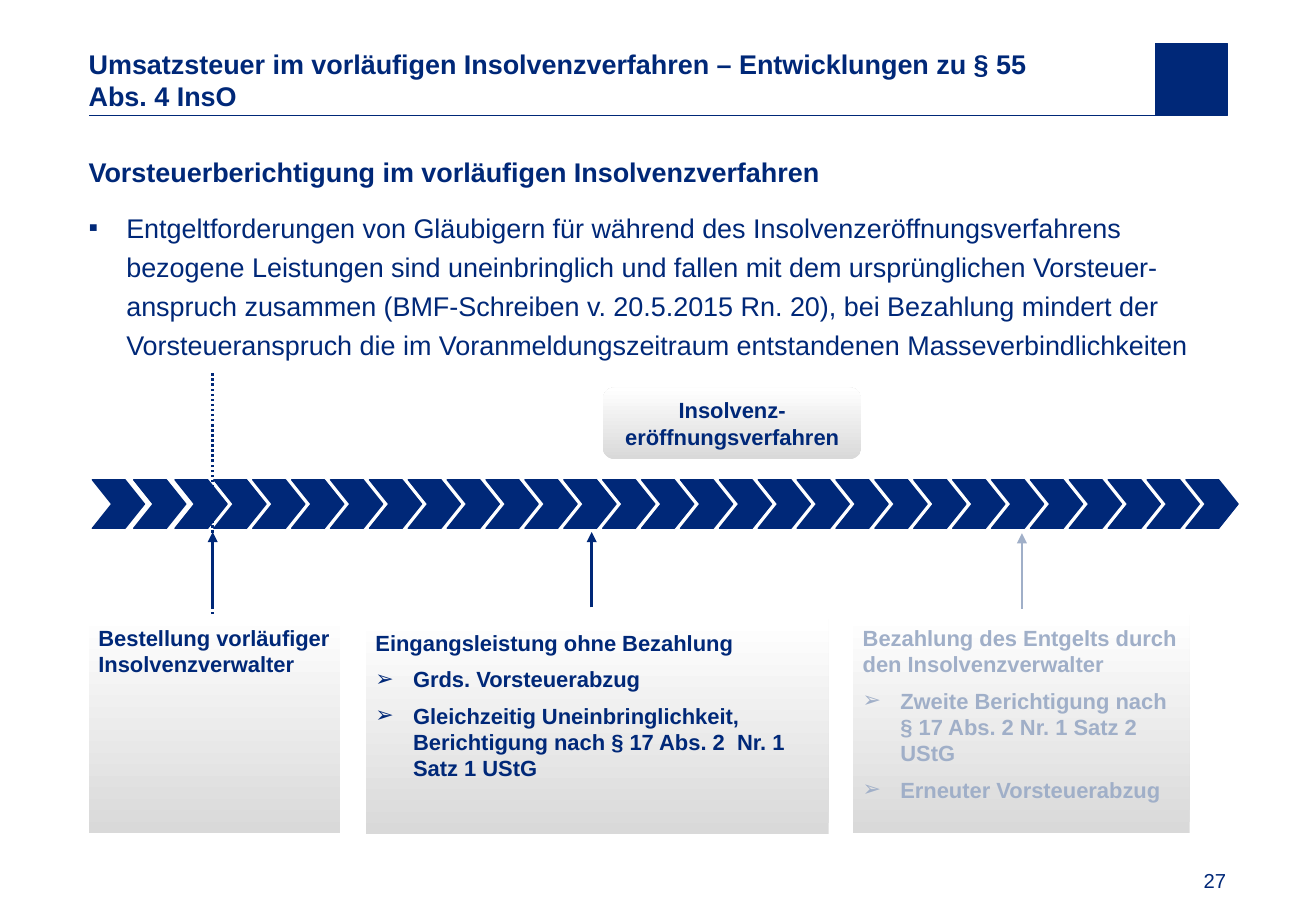
from lxml import etree
from pptx import Presentation
from pptx.dml.color import RGBColor
from pptx.enum.dml import MSO_LINE
from pptx.enum.shapes import MSO_CONNECTOR, MSO_SHAPE
from pptx.enum.text import MSO_ANCHOR, PP_ALIGN
from pptx.oxml.ns import qn
from pptx.util import Pt

PX = 9144  # 100 px to the inch
NAVY, PALE, GREY, WHITE = "002878", "A0AFC8", "D9D9D9", "FFFFFF"
RECT, ROUND, CHEVRON = MSO_SHAPE.RECTANGLE, MSO_SHAPE.ROUNDED_RECTANGLE, MSO_SHAPE.CHEVRON
TOP, MIDDLE, BOTTOM = MSO_ANCHOR.TOP, MSO_ANCHOR.MIDDLE, MSO_ANCHOR.BOTTOM
LEFT, CENTER, RIGHT = PP_ALIGN.LEFT, PP_ALIGN.CENTER, PP_ALIGN.RIGHT
STRAIGHT, DOTTED = MSO_CONNECTOR.STRAIGHT, MSO_LINE.ROUND_DOT
rgb = RGBColor.from_string

prs = Presentation()
prs.slide_width, prs.slide_height = 1083 * PX, 750 * PX
s = prs.slides.add_slide(prs.slide_layouts[6])


def write(sp, paras, size, color, anchor=TOP, align=LEFT, inset=(0, 0), before=0, spacing=None):
    """Fill a shape with paragraphs given as (text, bold, bullet)."""
    tf = sp.text_frame
    tf.word_wrap = True
    tf.vertical_anchor = anchor
    tf.margin_left = tf.margin_right = inset[0] * PX
    tf.margin_top = tf.margin_bottom = inset[1] * PX
    for i, (text, bold, bullet) in enumerate(paras):
        p = tf.add_paragraph() if i else tf.paragraphs[0]
        p.alignment = align
        p.space_before = Pt(before if i else 0)
        if spacing:
            p.line_spacing = spacing
        if bullet:
            pPr = p._p.get_or_add_pPr()
            pPr.set("marL", str(31 * PX))
            pPr.set("indent", str(-31 * PX))
            etree.SubElement(pPr, qn("a:buFont")).set("typeface", "Arial")
            etree.SubElement(pPr, qn("a:buChar")).set("char", bullet)
        for j, part in enumerate(text.split("\n")):
            if j:
                p.add_line_break()
            r = p.add_run()
            r.text = part
            r.font.name, r.font.size, r.font.bold = "Arial", Pt(size), bold
            r.font.color.rgb = rgb(color)


def connect(x1, y1, x2, y2, color, width, arrow=False):
    ln = s.shapes.add_connector(STRAIGHT, x1 * PX, y1 * PX, x2 * PX, y2 * PX)
    ln.line.color.rgb = rgb(color)
    ln.line.width = Pt(width)
    etree.SubElement(ln._element.spPr, qn("a:effectLst"))
    if arrow:
        etree.SubElement(ln.line._get_or_add_ln(), qn("a:tailEnd")).set("type", "triangle")
    return ln


# Header rule and dotted time marker
connect(1010, 95, 73, 95, NAVY, 0.5)
connect(175, 564, 175, 306, NAVY, 1.5).line.dash_style = DOTTED

# Title, body and page number
title = "Umsatzsteuer im vorläufigen Insolvenzverfahren – Entwicklungen zu § 55\nAbs. 4 InsO"
body = [
    ("Vorsteuerberichtigung im vorläufigen Insolvenzverfahren", True, None),
    ("Entgeltforderungen von Gläubigern für während des Insolvenzeröffnungsverfahrens "
     "bezogene Leistungen sind uneinbringlich und fallen mit dem ursprünglichen "
     "Vorsteuer-anspruch zusammen (BMF-Schreiben v. 20.5.2015 Rn. 20), bei Bezahlung "
     "mindert der Vorsteueranspruch die im Voranmeldungszeitraum entstandenen "
     "Masseverbindlichkeiten", False, "▪"),
]
texts = [
    ((73, 36, 840, 59), [(title, True, None)], 16, MIDDLE, LEFT, 0, None),
    ((73, 123, 937, 551), body, 16, TOP, LEFT, 10, 1.2),
    ((957, 710, 52, 25), [("27", False, None)], 12, BOTTOM, RIGHT, 0, None),
]
for box, paras, size, anchor, align, before, spacing in texts:
    sp = s.shapes.add_textbox(*(v * PX for v in box))
    write(sp, paras, size, NAVY, anchor, align, before=before, spacing=spacing)

# Gradient boxes
boxes = [
    (RECT, (702, 506, 277, 180), PALE, [
        ("Bezahlung des Entgelts durch den Insolvenzverwalter", True, None),
        ("Zweite Berichtigung nach § 17 Abs. 2 Nr. 1 Satz 2 UStG", True, "➢"),
        ("Erneuter Vorsteuerabzug", True, "➢")]),
    (ROUND, (496, 319, 213, 59), NAVY, [("Insolvenz-eröffnungsverfahren", True, None)]),
    (RECT, (301, 510, 381, 177), NAVY, [
        ("Eingangsleistung ohne Bezahlung", True, None),
        ("Grds. Vorsteuerabzug", True, "➢"),
        ("Gleichzeitig Uneinbringlichkeit, Berichtigung nach § 17 Abs. 2  Nr. 1 Satz 1 UStG",
         True, "➢")]),
    (RECT, (73, 506, 207, 180), NAVY, [
        ("Bestellung vorläufiger Insolvenzverwalter", True, None)]),
]
for kind, box, color, paras in boxes:
    sp = s.shapes.add_shape(kind, *(v * PX for v in box))
    sp.shadow.inherit = False
    sp.line.fill.background()
    sp.fill.gradient()
    sp.fill.gradient_angle = 90
    for stop, shade in zip(sp.fill.gradient_stops, (GREY, WHITE)):
        stop.color.rgb = rgb(shade)
    if kind == ROUND:
        write(sp, paras, 13, color, MIDDLE, CENTER, inset=(8, 4))
    else:
        write(sp, paras, 13, color, inset=(8, 8), before=6)

# Header square and timeline chevrons: the first two steps are slightly wider
solids = [(RECT, (951, 36, 59, 59), 0.5)]
solids += [(CHEVRON, (76 + 32 * i + 2 * min(i, 2), 395, 43, 40), 0.75) for i in range(29)]
for kind, box, width in solids:
    sp = s.shapes.add_shape(kind, *(v * PX for v in box))
    sp.shadow.inherit = False
    sp.fill.solid()
    sp.fill.fore_color.rgb = rgb(NAVY)
    sp.line.color.rgb = rgb(NAVY)
    sp.line.width = Pt(width)
    if kind == CHEVRON:
        sp.adjustments[0] = 0.4

# Arrows from the boxes up to the timeline
for x, y, color in [(175, 500, NAVY), (487, 500, NAVY), (841, 501, PALE)]:
    connect(x, y, x, y - 62, color, 1.5, arrow=True)

prs.save("out.pptx")
